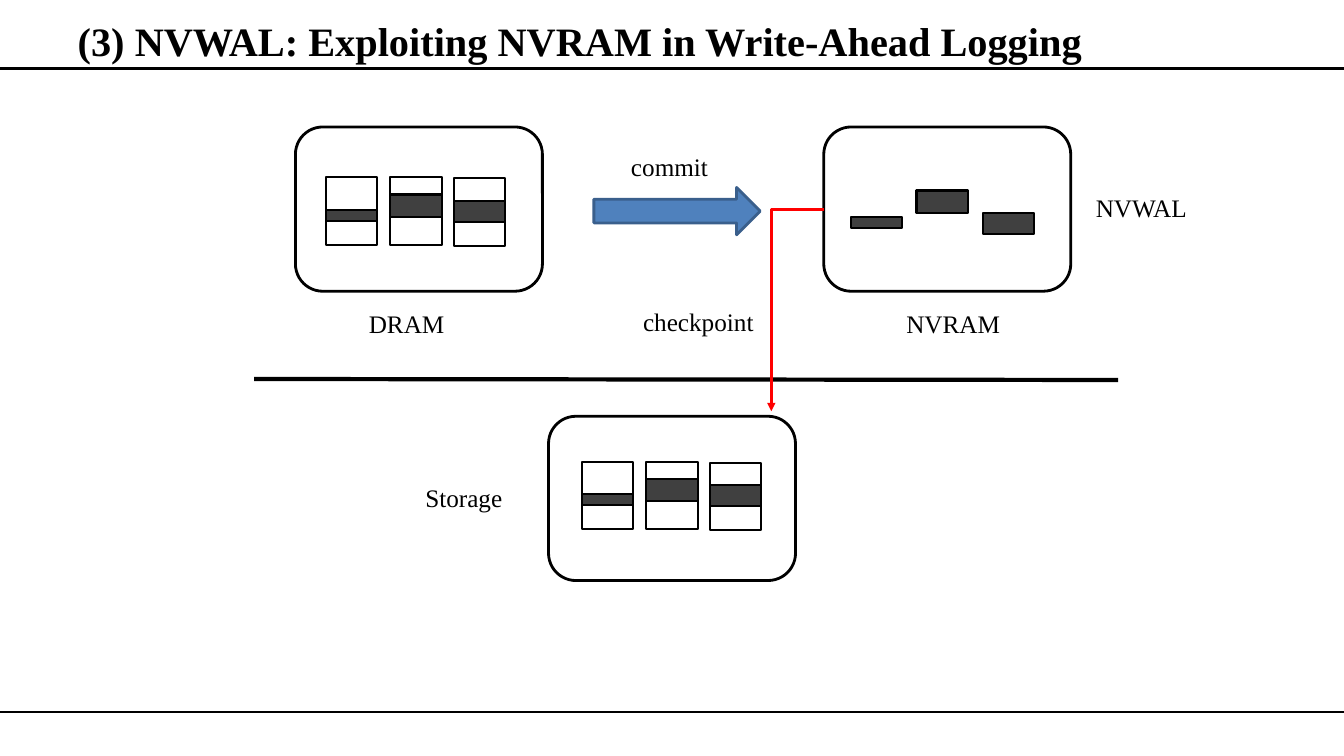
from lxml import etree
from pptx import Presentation
from pptx.dml.color import RGBColor
from pptx.enum.shapes import MSO_CONNECTOR, MSO_SHAPE
from pptx.enum.text import MSO_ANCHOR, MSO_AUTO_SIZE, PP_ALIGN
from pptx.oxml.ns import qn
from pptx.util import Emu, Pt

RECT, ROUNDED, ARROW = MSO_SHAPE.RECTANGLE, MSO_SHAPE.ROUNDED_RECTANGLE, MSO_SHAPE.RIGHT_ARROW
STRAIGHT, ELBOW = MSO_CONNECTOR.STRAIGHT, MSO_CONNECTOR.ELBOW
LEFT, MIDDLE = PP_ALIGN.LEFT, MSO_ANCHOR.MIDDLE
NO_FIT, GROW = MSO_AUTO_SIZE.NONE, MSO_AUTO_SIZE.SHAPE_TO_FIT_TEXT
EMU_PER_PX = 9144  # 100 px to the inch
TITLE_ONLY = 5

FONT = "Times New Roman"
BLACK, WHITE, DARK, RED = "000000", "FFFFFF", "404040", "FF0000"
BLUE, NAVY = "4F81BD", "3A5F8C"

MEMORY_SIZE = (245, 163)
PAGE_WIDTH, PAGE_HEIGHT = 51, 67
# Page left and top, then top and height of its changed part
PAGES = [(0, 0, 32, 11), (64, 0, 17, 22), (127, 1, 23, 21)]
LOG_POSITIONS = [(844, 215), (909, 189), (975, 211)]
LABELS = [
    ("DRAM", 356, 301, 110),
    ("commit", 616, 145, 111),
    ("NVRAM", 889, 301, 121),
    ("NVWAL", 1077, 186, 134),
    ("Storage", 412, 474, 110),
    ("checkpoint", 628, 299, 140),
]


def px(*lengths):
    return [Emu(length * EMU_PER_PX) for length in lengths]


def color(code):
    return RGBColor.from_string(code)


class Diagram:
    def __init__(self, slide):
        self.slide = slide

    def set_text(self, shape, text, size, bold=False):
        frame = shape.text_frame
        frame.text = text
        para = frame.paragraphs[0]
        para.alignment = LEFT
        font = para.runs[0].font
        font.name, font.size, font.bold = FONT, Pt(size), bold
        font.color.rgb = color(BLACK)

    def title(self, text, left, top, width, height):
        title = self.slide.shapes.title
        title.left, title.top, title.width, title.height = px(left, top, width, height)
        self.set_text(title, text, 28.8, True)
        title.text_frame.auto_size = NO_FIT
        title.text_frame.vertical_anchor = MIDDLE

    def label(self, text, left, top, width):
        box = self.slide.shapes.add_textbox(*px(left, top, width, 40))
        self.set_text(box, text, 18)
        box.text_frame.word_wrap = True
        box.text_frame.auto_size = GROW

    def shape(self, kind, left, top, width, height, fill=None, line=BLACK, weight=1.5):
        shape = self.slide.shapes.add_shape(kind, *px(left, top, width, height))
        shape.shadow.inherit = False
        if fill:
            shape.fill.solid()
            shape.fill.fore_color.rgb = color(fill)
        else:
            shape.fill.background()
        shape.line.color.rgb = color(line)
        shape.line.width = Pt(weight)

    def memory(self, left, top):
        self.shape(ROUNDED, left, top, *MEMORY_SIZE, weight=2)

    def pages(self, left, top):
        """Draw the three pages, each with its changed part in dark."""
        for right, down, part_down, part_height in PAGES:
            self.shape(RECT, left + right, top + down, PAGE_WIDTH, PAGE_HEIGHT, WHITE)
            self.shape(RECT, left + right, top + part_down, PAGE_WIDTH, part_height, DARK)

    def connector(self, kind, start, end, line=BLACK, weight=1.5):
        connector = self.slide.shapes.add_connector(kind, *px(*start, *end))
        connector.line.color.rgb = color(line)
        connector.line.width = Pt(weight)
        etree.SubElement(connector.element.spPr, qn("a:effectLst"))
        return connector

    def corner_arrow(self, start, end, line, weight):
        """Draw an arrow that runs sideways, then turns once."""
        properties = self.connector(ELBOW, start, end, line, weight).element.spPr
        properties.find(qn("a:prstGeom")).set("prst", "bentConnector2")
        etree.SubElement(properties.find(qn("a:ln")), qn("a:tailEnd"), type="triangle")


def main():
    deck = Presentation()
    deck.slide_width, deck.slide_height = px(1333, 750)
    diagram = Diagram(deck.slides.add_slide(deck.slide_layouts[TITLE_ONLY]))

    for rule_top in (68, 706):
        diagram.connector(STRAIGHT, (0, rule_top), (1333, rule_top))
    diagram.title("(3) NVWAL: Exploiting NVRAM in Write-Ahead Logging", 67, 13, 1200, 54)

    diagram.memory(293, 126)
    diagram.pages(323, 176)
    diagram.shape(ARROW, 589, 186, 165, 47, BLUE, NAVY, 2)

    diagram.memory(817, 126)
    for (left, top), (*_, part_height) in zip(LOG_POSITIONS, PAGES):
        diagram.shape(RECT, left, top, PAGE_WIDTH, part_height, DARK)

    diagram.connector(STRAIGHT, (252, 376), (1109, 377), weight=3)
    diagram.memory(544, 413)
    diagram.pages(577, 458)
    diagram.corner_arrow((817, 208), (765, 408), RED, 2)

    for label in LABELS:
        diagram.label(*label)
    deck.save("out.pptx")


if __name__ == "__main__":
    main()
